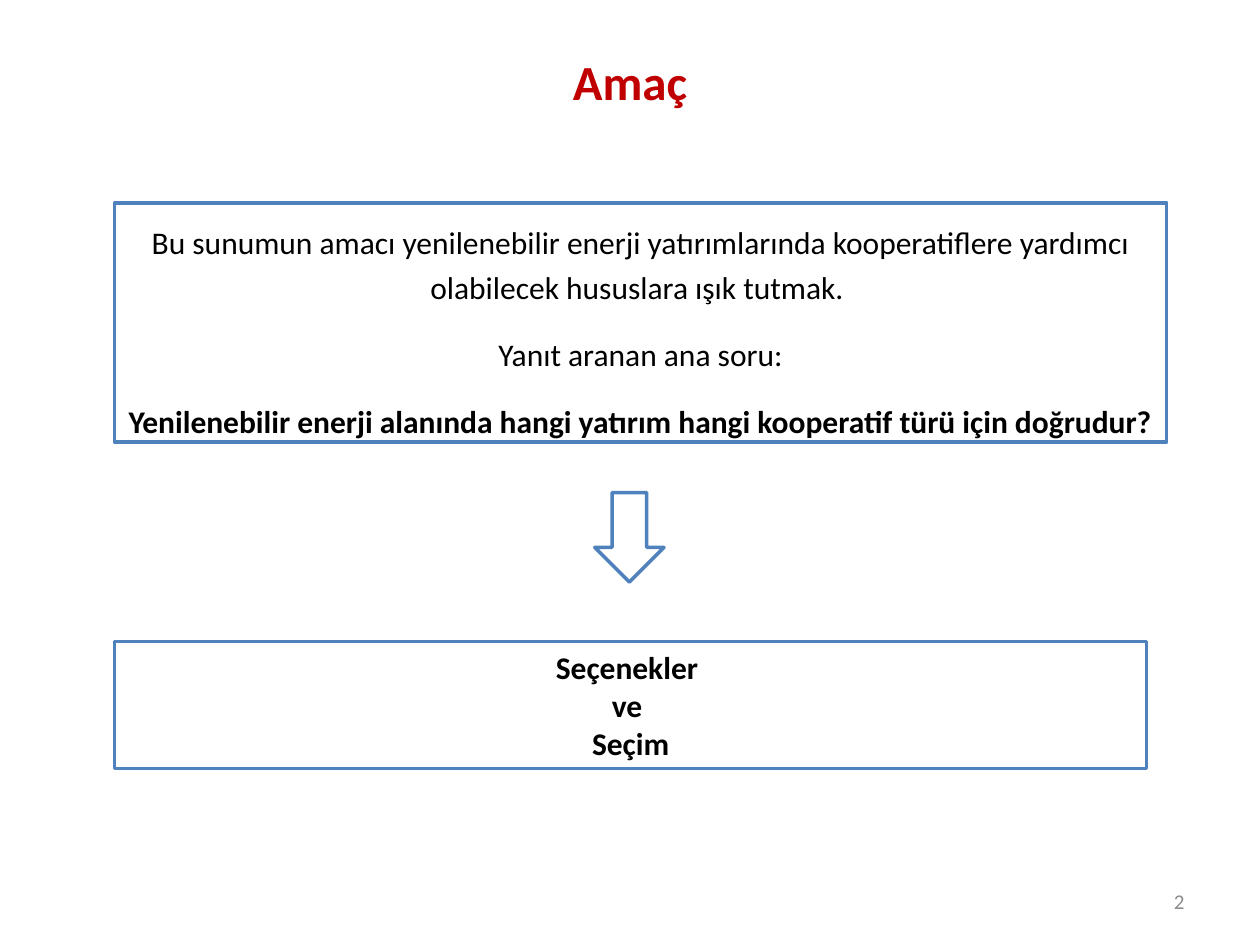
from pptx import Presentation
from pptx.dml.color import RGBColor
from pptx.enum.shapes import MSO_SHAPE
from pptx.enum.text import MSO_ANCHOR, PP_ALIGN
from pptx.util import Inches, Pt

RECTANGLE = MSO_SHAPE.RECTANGLE
DOWN_ARROW = MSO_SHAPE.DOWN_ARROW
MIDDLE = MSO_ANCHOR.MIDDLE
CENTER = PP_ALIGN.CENTER
RIGHT = PP_ALIGN.RIGHT

FONT = "Calibri"
BLACK, WHITE, BLUE, RED, GRAY = "000000", "FFFFFF", "4F81BD", "C00000", "8C8C8C"


def color(value):
    return RGBColor.from_string(value)


def write_lines(shape, lines, size=18, ink=BLACK, bold=False, align=CENTER):
    """Fill the shape with one paragraph per line and return the paragraphs."""
    frame = shape.text_frame
    frame.word_wrap = True
    frame.vertical_anchor = MIDDLE
    frame.text = "\n".join(lines)
    for para in frame.paragraphs:
        para.alignment = align
        for span in para.runs:
            span.font.name = FONT
            span.font.size = Pt(size)
            span.font.bold = bold
            span.font.color.rgb = color(ink)
    return frame.paragraphs


def add_label(page, place, text, **style):
    box = page.shapes.add_textbox(*map(Inches, place))
    write_lines(box, [text], **style)


def add_outlined(page, kind, place):
    shape = page.shapes.add_shape(kind, *map(Inches, place))
    shape.shadow.inherit = False
    shape.fill.solid()
    shape.fill.fore_color.rgb = color(WHITE)
    shape.line.color.rgb = color(BLUE)
    shape.line.width = Pt(2)
    return shape


def add_purpose(page):
    box = add_outlined(page, RECTANGLE, (0.91, 1.61, 8.35, 1.9))
    purpose, prompt, question = write_lines(box, [
        "Bu sunumun amacı yenilenebilir enerji yatırımlarında kooperatiflere "
        "yardımcı olabilecek hususlara ışık tutmak. ",
        "Yanıt aranan ana soru:",
        "Yenilenebilir enerji alanında hangi yatırım hangi kooperatif türü "
        "için doğrudur?",
    ])
    box.text_frame.margin_top = Inches(0.13)
    for para in (purpose, prompt):
        para.line_spacing = 1.2
        para.space_after = Pt(6)
    prompt.space_before = Pt(6)
    question.line_spacing = 1.5
    question.runs[0].font.bold = True


def add_outcome(page):
    box = add_outlined(page, RECTANGLE, (0.91, 5.09, 8.19, 1.01))
    write_lines(box, ["Seçenekler ", "ve ", "Seçim"], bold=True)


def main():
    deck = Presentation()
    deck.slide_width, deck.slide_height = Inches(10), Inches(7.5)
    page = deck.slides.add_slide(deck.slide_layouts[6])
    add_label(page, (0.5, 0.3, 9, 0.69), "Amaç", size=28, ink=RED, bold=True)
    add_purpose(page)
    add_outlined(page, DOWN_ARROW, (4.72, 3.91, 0.55, 0.71))
    add_outcome(page)
    add_label(page, (7.17, 6.95, 2.33, 0.4), "2", size=12, ink=GRAY, align=RIGHT)
    deck.save("out.pptx")


if __name__ == "__main__":
    main()
